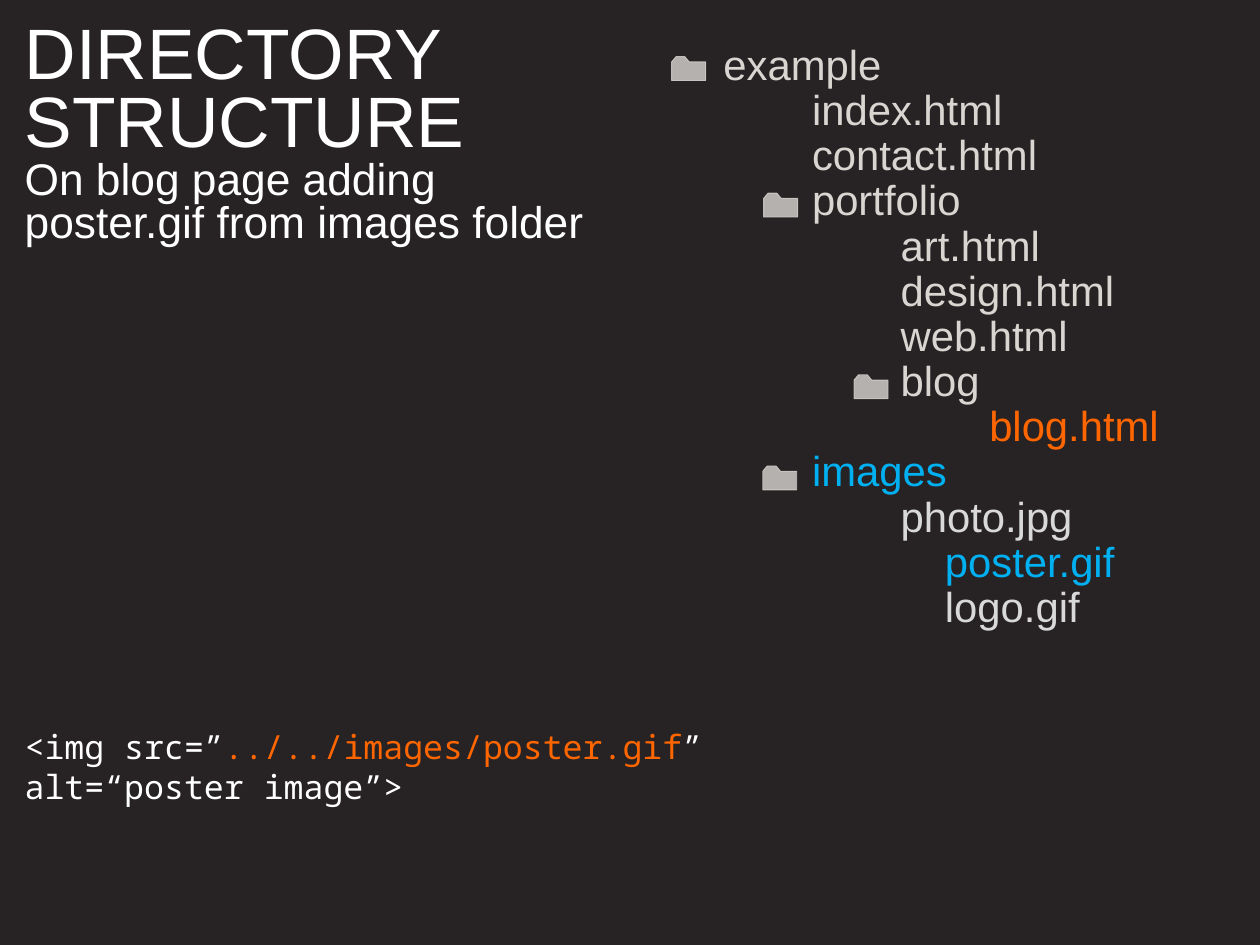
from lxml import etree
from pptx import Presentation
from pptx import util as u
from pptx.dml.color import RGBColor
from pptx.oxml import ns

COLOURS = {
    "background": "272224",
    "white": "FFFFFF",
    "stone": "D9D5D1",
    "grey": "D9D9D9",
    "orange": "FF6600",
    "blue": "00B0F0",
}
MARGIN = 20
INDENT = 72

# Folder outline and the top left corners where it stands
FOLDER_OUTLINE = [(27.6, 19.4), (27.6, 4.3), (14.4, 4.3), (10.8, 0),
                  (3.6, 0), (0, 4.3), (0, 19.4)]
FOLDERS = [(545.8, 46.1), (620.6, 157), (694.1, 304.6), (619.9, 378.7)]

# Name, depth in the tree, colour
TREE = [
    ("example", 0, "stone"),
    ("index.html", 1, "stone"),
    ("contact.html", 1, "stone"),
    ("portfolio", 1, "stone"),
    ("art.html", 2, "stone"),
    ("design.html", 2, "stone"),
    ("web.html", 2, "stone"),
    ("blog", 2, "stone"),
    ("blog.html", 3, "orange"),
    ("images", 1, "blue"),
    ("photo.jpg", 2, "grey"),
    ("poster.gif", 2.5, "blue"),
    ("logo.gif", 2.5, "grey"),
]


def colour(name):
    return RGBColor.from_string(COLOURS[name])


def add_text(page, left, top, width, height, paragraphs, font, spacing=1.0):
    """Each paragraph is (indent, size, [(text, colour), ...])."""
    box = page.shapes.add_textbox(u.Pt(left), u.Pt(top), u.Pt(width), u.Pt(height))
    frame = box.text_frame
    frame.word_wrap = True
    frame.margin_left = frame.margin_right = 0
    frame.margin_top = frame.margin_bottom = 0
    for index, (indent, size, spans) in enumerate(paragraphs):
        para = frame.add_paragraph() if index else frame.paragraphs[0]
        para.line_spacing = spacing
        if indent:
            properties = para._p.get_or_add_pPr()
            properties.set("marL", str(u.Pt(indent)))
            properties.set("indent", "0")
        for words, tint in spans:
            span = para.add_run()
            span.text = words
            span.font.name = font
            span.font.size = u.Pt(size)
            span.font.color.rgb = colour(tint)


def add_folder(page, left, top):
    points = [(u.Pt(left + x), u.Pt(top + y)) for x, y in FOLDER_OUTLINE]
    builder = page.shapes.build_freeform(*points[0])
    builder.add_line_segments(points[1:], close=True)
    folder = builder.convert_to_shape()
    folder.shadow.inherit = False
    folder.fill.solid()
    folder.fill.fore_color.rgb = colour("stone")
    folder.line.color.rgb = colour("stone")
    folder.line.width = u.Pt(0)
    # Make fill and line 80 % opaque
    for tint in folder._element.spPr.iter(ns.qn("a:srgbClr")):
        etree.SubElement(tint, ns.qn("a:alpha"), val="80000")


def main():
    deck = Presentation()
    deck.slide_width, deck.slide_height = u.Pt(1024), u.Pt(768)
    page = deck.slides.add_slide(deck.slide_layouts[6])
    page.background.fill.solid()
    page.background.fill.fore_color.rgb = colour("background")

    # Heading
    heading = [("DIRECTORY", 58), ("STRUCTURE", 58),
               ("On blog page adding poster.gif from images folder", 36)]
    add_text(page, MARGIN, 20, 469.5, 142,
             [(0, size, [(words, "white")]) for words, size in heading],
             "Arial", 0.8)

    # Directory tree
    for left, top in FOLDERS:
        add_folder(page, left, top)
    add_text(page, 588, 36, 380, 482.4,
             [(depth * INDENT, 34, [(name, tint)]) for name, depth, tint in TREE],
             "Arial", 0.9)

    # Code line
    code = [("<img src=”", "white"), ("../../images/poster.gif", "orange"),
            ("” alt=“poster image”>", "white")]
    add_text(page, MARGIN, 590.4, 627, 142, [(0, 27, code)], "Noto Sans Mono")

    deck.save("out.pptx")


if __name__ == "__main__":
    main()
